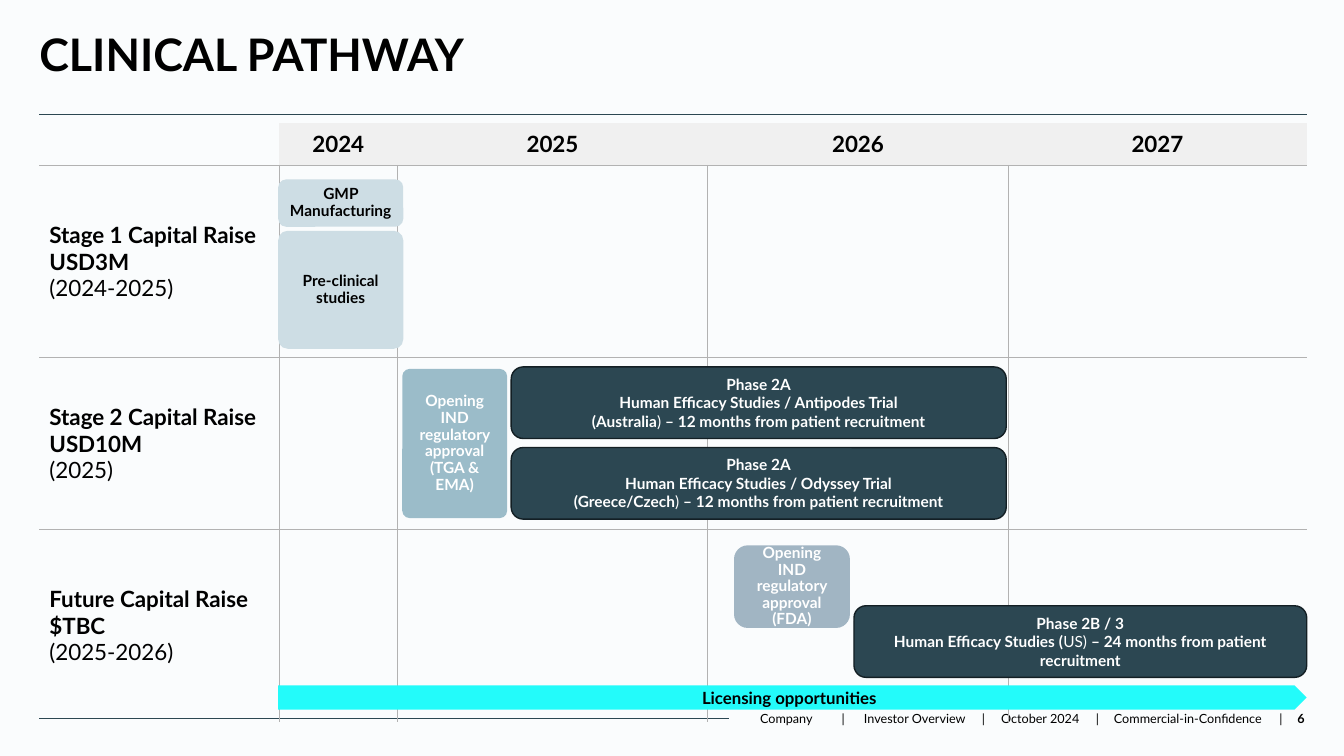
from lxml.etree import SubElement as Sub
from pptx import Presentation
from pptx.dml.color import RGBColor as Rgb
from pptx.enum.shapes import MSO_CONNECTOR as Link, MSO_SHAPE as Kind
from pptx.enum.text import MSO_ANCHOR as Anchor, PP_ALIGN as Align
from pptx.oxml.ns import qn
from pptx.util import Inches, Pt

HUES = {
    "back": "FAFCFD", "black": "000000", "white": "FFFFFF", "dark": "2C4752",
    "edge": "131F24", "grid": "B2B2B2", "head": "F0F0F0", "pale": "CDDDE4",
    "teal": "9BBCC9", "slate": "A1B5C3", "cyan": "23FBFA",
}
YEARS = ["2024", "2025", "2026", "2027"]
STAGES = [
    ("Stage 1 Capital Raise\nUSD3M\n", "(2024-2025)"),
    ("Stage 2 Capital Raise\nUSD10M\n", "(2025)"),
    ("Future Capital Raise\n$TBC\n", "(2025-2026)"),
]
WIDTHS = [2.38, 1.17, 3.08, 2.98, 2.96]
HEIGHTS = [0.42, 1.91, 1.7, 1.91]
FOOT = ["Company", "Investor Overview", "October 2024", "Commercial-in-Confidence"]
STOPS = [0.81, 1.03, 2.2, 2.39, 3.33, 3.51, 5.15, 5.33]
TRIALS = [("Antipodes", "Australia"), ("Odyssey", "Greece/Czech")]


def hue(name):
    return Rgb.from_string(HUES[name])


def area(box):
    return [Inches(n) for n in box]


def style(par, size, color="black", bold=True):
    font = par.font
    font.name, font.size, font.bold = "Lato", Pt(size), bold
    font.color.rgb = hue(color)


def write(par, parts, size, color="black", align=Align.LEFT, space=None):
    par.alignment = align
    par.line_spacing = space
    style(par, size, color, True if len(parts) == 1 else None)
    for num, part in enumerate(parts):
        for row, line in enumerate(part.split("\n")):
            if row:
                par.add_line_break()
            if line:
                run = par.add_run()
                run.text = line
                if len(parts) > 1:
                    run.font.bold = num % 2 == 0


def add_line(slide, box):
    left, top, width = area(box)
    line = slide.shapes.add_connector(Link.STRAIGHT, left, top, left + width, top)
    line.line.color.rgb = hue("dark")
    line.line.width = Pt(0.5)
    Sub(line._element.spPr, qn("a:effectLst"))


def add_title(slide, box):
    title = slide.shapes.title
    title.left, title.top, title.width, title.height = area(box)
    frame = title.text_frame
    frame.margin_left = 0
    frame.vertical_anchor = Anchor.TOP
    write(frame.paragraphs[0], ["CLINICAL PATHWAY"], 32, space=0.85)


def add_foot(slide, box):
    frame = slide.shapes.add_textbox(*area(box)).text_frame
    frame.word_wrap = True
    par = frame.paragraphs[0]
    tabs = Sub(par._p.get_or_add_pPr(), qn("a:tabLst"))
    for stop in STOPS:
        Sub(tabs, qn("a:tab"), pos=str(Inches(stop)), algn="l")
    style(par, 9, bold=None)
    par.add_run().text = "\t|\t".join(FOOT) + "\t|\t"
    page = par.add_run()
    page.text = "6"
    page.font.bold = True


def add_edges(cell, sides):
    props = cell._tc.get_or_add_tcPr()
    for side in "LRTB":
        shown = side in sides
        edge = Sub(props, qn("a:ln" + side), w=str(Pt(0.5) if shown else 0))
        fill = Sub(edge, qn("a:solidFill" if shown else "a:noFill"))
        if shown:
            Sub(fill, qn("a:srgbClr"), val=HUES["grid"])


def add_grid(slide, box):
    table = slide.shapes.add_table(4, 5, *area(box)).table
    table.first_row = table.horz_banding = False
    table._tbl.tblPr.find(qn("a:tableStyleId")).text = "{2D5ABB26-0587-4C30-8999-92F81FD0307C}"
    for col, width in zip(table.columns, WIDTHS):
        col.width = Inches(width)
    for row, height in zip(table.rows, HEIGHTS):
        row.height = Inches(height)
    for r in range(4):
        for c in range(5):
            cell = table.cell(r, c)
            cell.vertical_anchor = Anchor.MIDDLE
            sides = ("T" if r else "") + ("B" if r < 3 else "")
            if r:
                sides += ("L" if c else "") + ("R" if c < 4 else "")
            add_edges(cell, sides)
            par = cell.text_frame.paragraphs[0]
            if r == 0 and c:
                cell.fill.solid()
                cell.fill.fore_color.rgb = hue("head")
                write(par, [YEARS[c - 1]], 16, align=Align.CENTER)
            else:
                cell.fill.background()
                if r and c == 0:
                    write(par, STAGES[r - 1], 16)


def add_bar(slide, box, fill, pars, color="black", size=11, space=0.9,
            kind=Kind.ROUNDED_RECTANGLE, curve=None, side=0.1, edge=None):
    bar = slide.shapes.add_shape(kind, *area(box))
    bar.shadow.inherit = False
    bar.fill.solid()
    bar.fill.fore_color.rgb = hue(fill)
    if edge:
        bar.line.color.rgb = hue(edge)
        bar.line.width = Pt(1)
    else:
        bar.line.fill.background()
    if curve:
        bar.adjustments[0] = curve
    frame = bar.text_frame
    frame.word_wrap = True
    frame.vertical_anchor = Anchor.MIDDLE
    frame.margin_left = frame.margin_right = Inches(side)
    for num, parts in enumerate(pars):
        par = frame.add_paragraph() if num else frame.paragraphs[0]
        write(par, parts, size, color, Align.CENTER, space)


def add_phase(slide, box, parts):
    add_bar(slide, box, "dark", [parts], "white", space=None, edge="edge")


def add_plan(slide, box):
    x, y, width = box
    add_bar(slide, (x, y, 1.24, 0.47), "pale", [["GMP Manufacturing"]], side=0.04)
    add_bar(slide, (x, y + 0.51, 1.24, 1.17), "pale", [["Pre-clinical"], ["studies"]],
            curve=0.08, side=0)
    add_bar(slide, (x + 1.23, y + 1.88, 1.04, 1.48), "teal",
            [["Opening IND regulatory approval\n(TGA & EMA)"]], "white", curve=0.07)
    for num, (name, place) in enumerate(TRIALS):
        add_phase(slide, (x + 2.31, y + 1.86 + 0.8 * num, 4.91, 0.71),
                  [f"Phase 2A\nHuman Efficacy Studies / {name} Trial\n({place}",
                   ") ", "– 12 months from patient recruitment"])
    add_bar(slide, (x + 4.52, y + 3.63, 1.15, 0.82), "slate",
            [["Opening IND regulatory approval (FDA)"]], "white")
    add_phase(slide, (x + 5.71, y + 4.23, 4.49, 0.71),
              ["Phase 2B / 3\nHuman Efficacy Studies (", "US) ",
               "– 24 months from patient recruitment"])
    add_bar(slide, (x, y + 5.02, width, 0.24), "cyan", [["Licensing opportunities"]],
            size=12, space=None, kind=Kind.PENTAGON)


def main():
    deck = Presentation()
    deck.slide_width, deck.slide_height = Inches(13.33), Inches(7.5)
    slide = deck.slides.add_slide(deck.slide_layouts[5])
    slide.background.fill.solid()
    slide.background.fill.fore_color.rgb = hue("back")
    add_foot(slide, (7.44, 7, 5.65, 0.25))
    add_line(slide, (0.39, 7.13, 6.84))
    add_line(slide, (0.39, 1.13, 12.57))
    add_title(slide, (0.39, 0.3, 10.16, 0.61))
    add_grid(slide, (0.39, 1.22, 12.57, 5.94))
    add_plan(slide, (2.76, 1.78, 10.2))
    deck.save("out.pptx")


if __name__ == "__main__":
    main()
